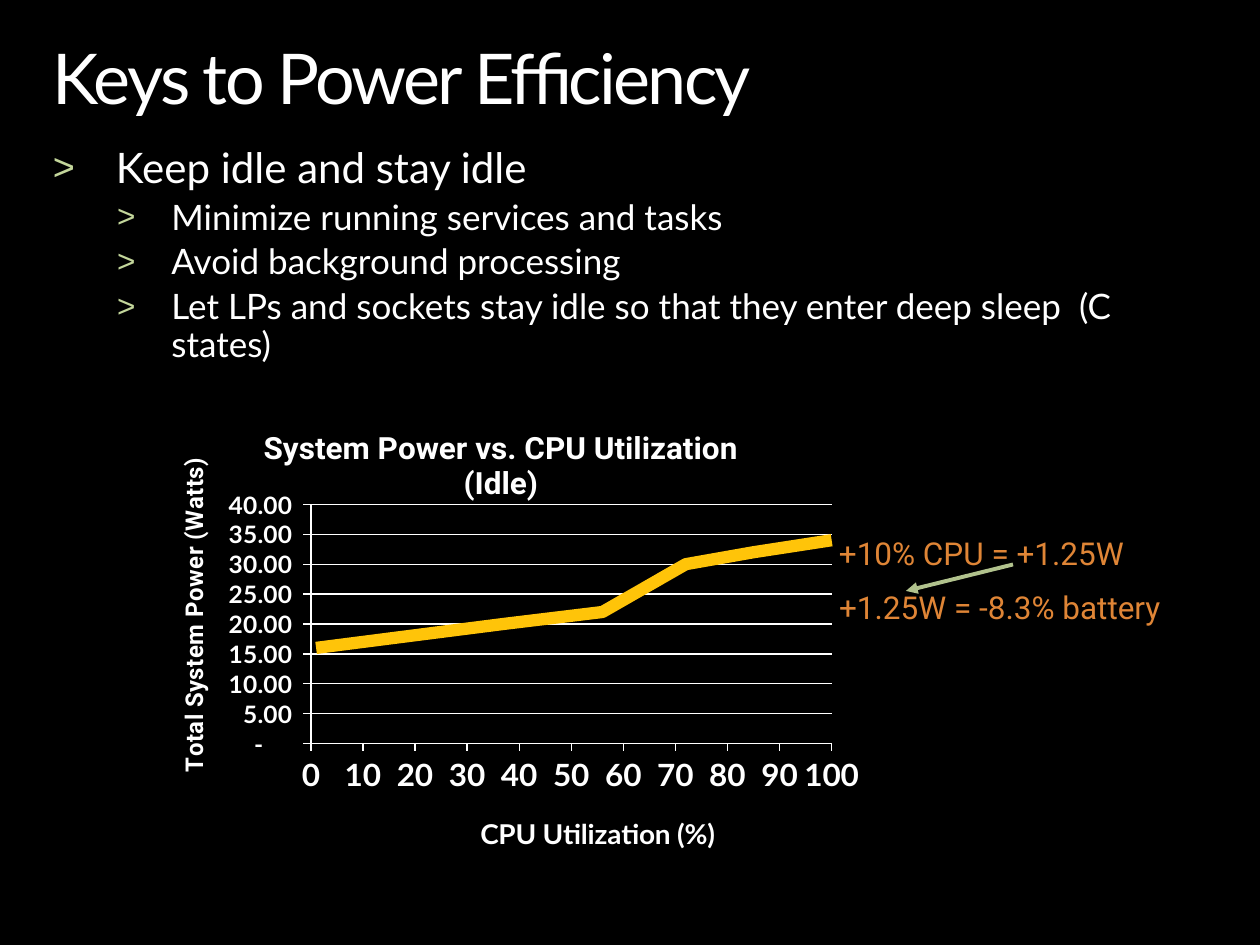
from lxml import etree
from pptx import Presentation, util as u
from pptx.chart import data
from pptx.dml import color
from pptx.enum import chart as ch, shapes, text
from pptx.oxml import ns

RGB = color.RGBColor
BLACK = RGB(0x00, 0x00, 0x00)
WHITE = RGB(0xFF, 0xFF, 0xFF)
ORANGE = RGB(0xDF, 0x85, 0x36)
GOLD = RGB(0xFF, 0xC4, 0x09)
SAGE = RGB(0xB1, 0xC2, 0x8D)
LIME = RGB(0xC3, 0xD6, 0x9B)
HEAD, SANS = "Lato", "Roboto"
WATTS = '_(* #,##0.00_);_(* \\(#,##0.00\\);_(* "-"??_);_(@_)'

POINTS = [(1, 16), (19, 18), (37, 20), (56, 22), (72, 30), (85, 32), (100, 34)]
BULLETS = [
    (0, "Keep idle and stay idle"),
    (1, "Minimize running services and tasks"),
    (1, "Avoid background processing"),
    (1, "Let LPs and sockets stay idle so that they enter deep sleep  (C states)"),
]
LEVELS = [(24, 0.5, 0.5), (20, 0.94, 0.43)]


def sub(node, tag, **attrs):
    """Append a namespaced child element."""
    return etree.SubElement(node, ns.qn(tag), **attrs)


class Deck:
    """Slide style and one method per kind of element."""

    def __init__(self):
        self.prs = Presentation()
        self.prs.slide_width, self.prs.slide_height = u.Inches(10), u.Inches(7.5)
        self.slide = self.prs.slides.add_slide(self.prs.slide_layouts[1])
        fill = self.slide.background.fill
        fill.solid()
        fill.fore_color.rgb = BLACK

    def place(self, shape, box):
        shape.left, shape.top, shape.width, shape.height = map(u.Inches, box)

    def frame(self, shape, side=0, edge=0, anchor=text.MSO_ANCHOR.TOP):
        frame = shape.text_frame
        frame.word_wrap = True
        frame.auto_size = text.MSO_AUTO_SIZE.NONE
        frame.margin_left = frame.margin_right = u.Inches(side)
        frame.margin_top = frame.margin_bottom = u.Inches(edge)
        frame.vertical_anchor = anchor
        return frame

    def style(self, font, size, face=HEAD, tint=WHITE, bold=False):
        font.size, font.name, font.bold = u.Pt(size), face, bold
        font.color.rgb = tint

    def run(self, para, words, size, face=HEAD, tint=WHITE, bold=False):
        run = para.add_run()
        run.text = words
        self.style(run.font, size, face, tint, bold)
        return run

    def title(self, words, box):
        shape = self.slide.shapes.title
        self.place(shape, box)
        para = self.frame(shape).paragraphs[0]
        para.alignment = text.PP_ALIGN.LEFT
        para.line_spacing = 0.9
        run = self.run(para, words, 40)
        run.font._element.set("spc", "-150")

    def body(self, items, box):
        shape = self.slide.placeholders[1]
        self.place(shape, box)
        frame = self.frame(shape)
        for i, (level, words) in enumerate(items):
            para = frame.add_paragraph() if i else frame.paragraphs[0]
            size, left, hang = LEVELS[level]
            para.level = level
            para.line_spacing = 0.9
            para.space_before = u.Pt(size * 0.2 if i else 0)
            props = para._p.get_or_add_pPr()
            props.set("marL", str(u.Inches(left)))
            props.set("indent", str(-u.Inches(hang)))
            sub(sub(props, "a:buClr"), "a:srgbClr", val=str(LIME))
            sub(props, "a:buSzPct", val="90000")
            sub(props, "a:buFont", typeface="Arial")
            sub(props, "a:buChar", char=">")
            self.run(para, words, size)

    def note(self, words, box, side, anchor):
        shape = self.slide.shapes.add_textbox(*map(u.Inches, box))
        frame = self.frame(shape, side, 0.05, anchor)
        self.run(frame.paragraphs[0], words, 18, SANS, ORANGE)

    def arrow(self, start, end):
        line = self.slide.shapes.add_connector(
            shapes.MSO_CONNECTOR.STRAIGHT, *map(u.Inches, start + end))
        line.line.color.rgb = SAGE
        line.line.width = u.Pt(2.25)
        sub(line.line._get_or_add_ln(), "a:tailEnd", type="triangle")
        sub(line._element.spPr, "a:effectLst")

    def layout(self, node, **spots):
        for old in node.findall(ns.qn("c:layout")):
            node.remove(old)
        outer = etree.Element(ns.qn("c:layout"))
        inner = sub(outer, "c:manualLayout")
        if "w" in spots:
            sub(inner, "c:layoutTarget", val="inner")
        for key in "xy":
            sub(inner, f"c:{key}Mode", val="edge")
        for key, val in spots.items():
            sub(inner, f"c:{key}", val=str(val))
        lead = node.find(ns.qn("c:tx"))
        if lead is None:
            node.insert(0, outer)
        else:
            lead.addnext(outer)

    def label(self, title, lines, size, face, x, y):
        frame = title.text_frame
        for i, words in enumerate(lines):
            para = frame.add_paragraph() if i else frame.paragraphs[0]
            self.run(para, words, size, face, bold=True)
        self.layout(title._element, x=x, y=y)

    def axis(self, axis, top, step, size, form):
        axis.minimum_scale, axis.maximum_scale, axis.major_unit = 0, top, step
        axis.major_tick_mark = ch.XL_TICK_MARK.OUTSIDE
        axis.minor_tick_mark = ch.XL_TICK_MARK.NONE
        axis.tick_labels.number_format = form
        axis.tick_labels.number_format_is_linked = False
        self.style(axis.tick_labels.font, size, bold=True)
        axis.format.line.color.rgb = WHITE
        axis.format.line.width = u.Pt(0.75)

    def chart(self, points, box):
        feed = data.XyChartData()
        series = feed.add_series("Series 1")
        for x, y in points:
            series.add_data_point(x, y)
        chart = self.slide.shapes.add_chart(
            ch.XL_CHART_TYPE.XY_SCATTER_LINES_NO_MARKERS,
            *map(u.Inches, box), feed).chart
        self.style(chart.font, 18)
        chart.has_legend = False
        chart.has_title = True
        self.label(chart.chart_title, ["System Power vs. CPU Utilization", "(Idle)"],
                   18, SANS, 0.22, 0.08)
        load, power = chart.category_axis, chart.value_axis
        self.axis(load, 100, 10, 18, "General")
        self.axis(power, 40, 5, 14, WATTS)
        self.label(load.axis_title, ["CPU Utilization (%)"], 16, HEAD, 0.49, 0.92)
        self.label(power.axis_title, ["Total System Power (Watts)"], 14, SANS, 0.11, 0.16)
        load.has_major_gridlines = False
        power.has_major_gridlines = True
        grid = power.major_gridlines.format.line
        grid.color.rgb, grid.width = WHITE, u.Pt(0.75)
        plot = chart.plots[0]
        plot.vary_by_categories = False
        curve = plot.series[0]
        curve.smooth = False
        curve.marker.style = ch.XL_MARKER_STYLE.NONE
        curve.format.line.color.rgb = GOLD
        curve.format.line.width = u.Pt(7)
        area = chart._chartSpace.chart.plotArea
        self.layout(area, x=0.284, y=0.254, w=0.653, h=0.522)


def main():
    """Build the power efficiency slide."""
    deck = Deck()
    deck.title("Keys to Power Efficiency", (0.42, 0.35, 9.17, 0.61))
    deck.body(BULLETS, (0.42, 1.17, 9.17, 1.78))
    deck.chart(POINTS, (0.67, 3.08, 6.33, 3.73))
    deck.note("+10% CPU = +1.25W", (6.56, 4.19, 2.97, 0.4), 0.1, text.MSO_ANCHOR.TOP)
    deck.note("+1.25W = -8.3% battery", (6.66, 4.59, 3.07, 0.45), 0,
              text.MSO_ANCHOR.MIDDLE)
    deck.arrow((8.04, 4.48), (7.19, 4.69))
    deck.prs.save("out.pptx")


if __name__ == "__main__":
    main()
